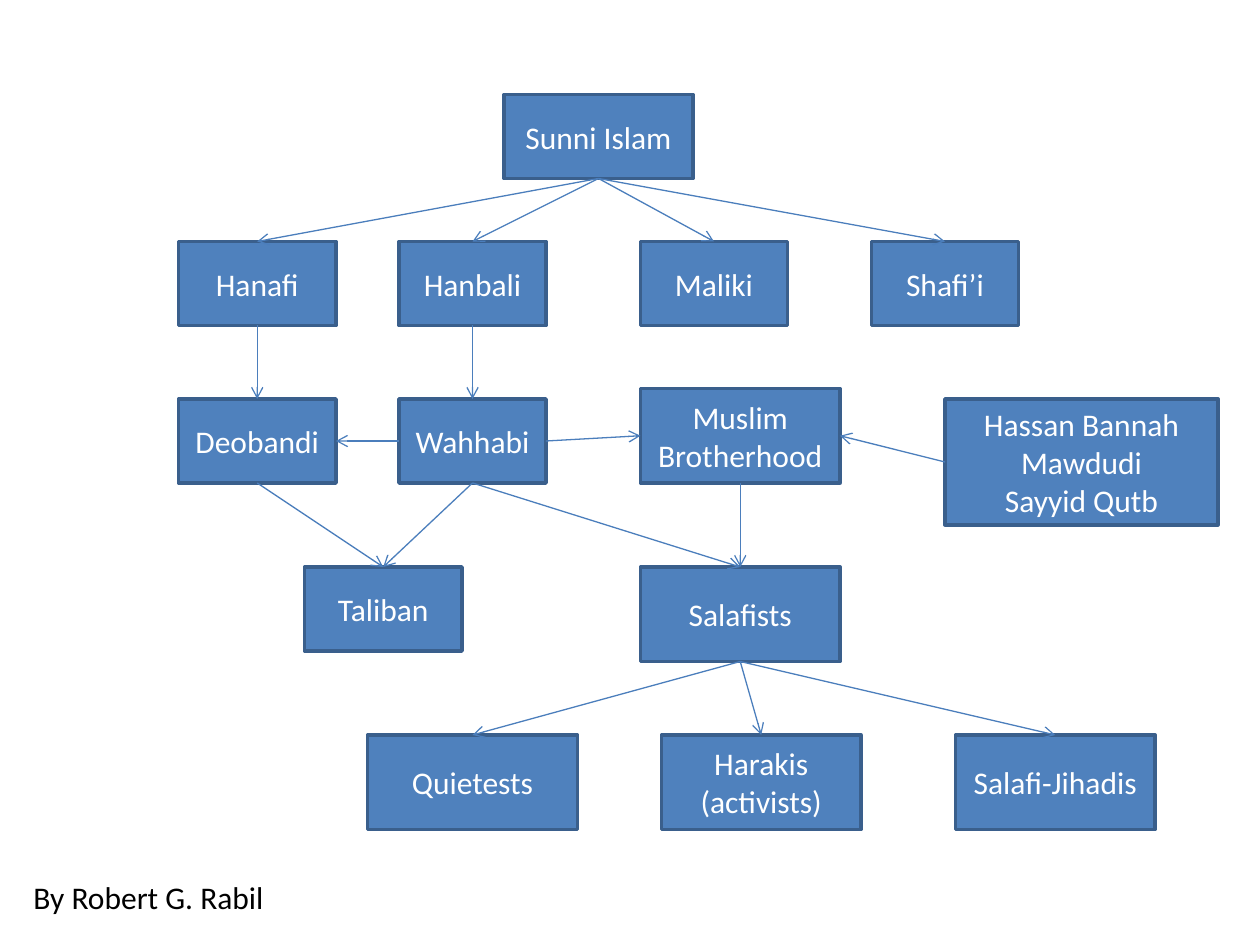
from lxml.etree import SubElement
from pptx import Presentation
from pptx.dml.color import RGBColor
from pptx.enum.shapes import MSO_CONNECTOR, MSO_SHAPE
from pptx.enum.text import MSO_ANCHOR, MSO_AUTO_SIZE, PP_ALIGN
from pptx.oxml.ns import qn
from pptx.util import Inches, Pt

BLUE = RGBColor(0x4F, 0x81, 0xBD)
EDGE = RGBColor(0x3A, 0x5F, 0x8C)
LINK = RGBColor(0x4B, 0x7E, 0xBC)
WHITE = RGBColor(0xFF, 0xFF, 0xFF)
BLACK = RGBColor(0x00, 0x00, 0x00)
TOP, LEFT, BOTTOM, RIGHT = range(4)
STEP = MSO_SHAPE.FLOWCHART_PROCESS
RECT = MSO_SHAPE.RECTANGLE


class Chart:
    font = "Calibri"
    size = Pt(18)
    unit = Inches(1) / 12

    def __init__(self, slide):
        self.slide = slide
        self.nodes = {}

    def grid(self, *cells):
        return [round(cell * self.unit) for cell in cells]

    def style(self, frame, text, color, align):
        frame.text = text
        for para in frame.paragraphs:
            para.alignment = align
            for run in para.runs:
                run.font.name = self.font
                run.font.size = self.size
                run.font.color.rgb = color

    def box(self, name, text, kind, col, row, wide, high):
        shape = self.slide.shapes.add_shape(kind, *self.grid(col, row, wide, high))
        shape.shadow.inherit = False
        shape.fill.solid()
        shape.fill.fore_color.rgb = BLUE
        shape.line.color.rgb = EDGE
        shape.line.width = Pt(2)
        frame = shape.text_frame
        frame.word_wrap = True
        frame.vertical_anchor = MSO_ANCHOR.MIDDLE
        self.style(frame, text, WHITE, PP_ALIGN.CENTER)
        self.nodes[name] = shape

    def arrow(self, start, end, out=BOTTOM, into=TOP):
        line = self.slide.shapes.add_connector(MSO_CONNECTOR.STRAIGHT, 0, 0, 0, 0)
        line.begin_connect(self.nodes[start], out)
        line.end_connect(self.nodes[end], into)
        line.line.color.rgb = LINK
        line.line.width = Pt(0.75)
        props = line._element.spPr
        SubElement(props.find(qn("a:ln")), qn("a:tailEnd"), type="arrow")
        SubElement(props, qn("a:effectLst"))

    def label(self, text, col, row, wide, high):
        shape = self.slide.shapes.add_textbox(*self.grid(col, row, wide, high))
        frame = shape.text_frame
        frame.word_wrap = False
        frame.auto_size = MSO_AUTO_SIZE.SHAPE_TO_FIT_TEXT
        self.style(frame, text, BLACK, PP_ALIGN.LEFT)


def main():
    deck = Presentation()
    deck.slide_width, deck.slide_height = Inches(10), Inches(7.5)
    chart = Chart(deck.slides.add_slide(deck.slide_layouts[6]))

    boxes = [
        ("sunni", "Sunni Islam", STEP, 48, 9, 18, 8),
        ("hanafi", "Hanafi", STEP, 17, 23, 15, 8),
        ("hanbali", "Hanbali", STEP, 38, 23, 14, 8),
        ("maliki", "Maliki", STEP, 61, 23, 14, 8),
        ("shafii", "Shafi’i", STEP, 83, 23, 14, 8),
        ("wahhabi", "Wahhabi", STEP, 38, 38, 14, 8),
        ("deobandi", "Deobandi", STEP, 17, 38, 15, 8),
        ("taliban", "Taliban", STEP, 29, 54, 15, 8),
        ("brothers", "Muslim Brotherhood", RECT, 61, 37, 19, 9),
        ("thinkers", "Hassan Bannah\nMawdudi\nSayyid Qutb", RECT, 90, 38, 26, 12),
        ("quiet", "Quietests", RECT, 35, 70, 20, 9),
        ("harakis", "Harakis (activists)", RECT, 63, 70, 19, 9),
        ("jihadis", "Salafi-Jihadis", RECT, 91, 70, 19, 9),
        ("salafi", "Salafists", RECT, 61, 54, 19, 9),
    ]
    for box in boxes:
        chart.box(*box)

    trees = {
        "sunni": ["hanafi", "hanbali", "maliki", "shafii"],
        "hanafi": ["deobandi"],
        "hanbali": ["wahhabi"],
        "deobandi": ["taliban"],
        "wahhabi": ["taliban", "salafi"],
        "brothers": ["salafi"],
        "salafi": ["quiet", "harakis", "jihadis"],
    }
    for start, ends in trees.items():
        for end in ends:
            chart.arrow(start, end)
    chart.arrow("wahhabi", "deobandi", LEFT, RIGHT)
    chart.arrow("wahhabi", "brothers", RIGHT, LEFT)
    chart.arrow("thinkers", "brothers", LEFT, RIGHT)

    chart.label("By Robert G. Rabil", 2, 83, 24.6, 4.85)
    deck.save("out.pptx")


if __name__ == "__main__":
    main()
